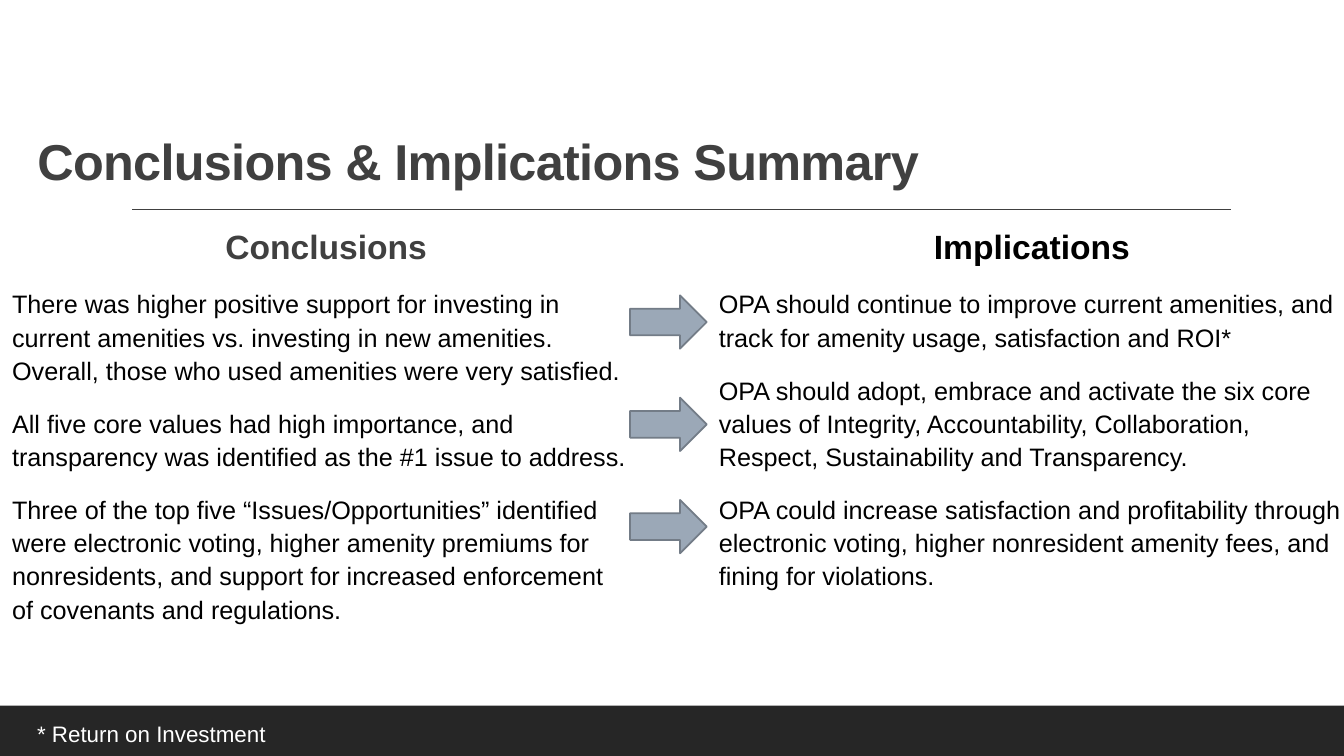
from dataclasses import dataclass

from lxml import etree
from pptx import Presentation
from pptx.dml.color import RGBColor
from pptx.enum.shapes import MSO_CONNECTOR, MSO_SHAPE
from pptx.enum.text import MSO_ANCHOR, MSO_AUTO_SIZE, PP_ALIGN
from pptx.oxml.ns import qn
from pptx.util import Inches, Pt

STRAIGHT = MSO_CONNECTOR.STRAIGHT
RECTANGLE, RIGHT_ARROW = MSO_SHAPE.RECTANGLE, MSO_SHAPE.RIGHT_ARROW
TOP, BOTTOM = MSO_ANCHOR.TOP, MSO_ANCHOR.BOTTOM
NO_FIT, GROW = MSO_AUTO_SIZE.NONE, MSO_AUTO_SIZE.SHAPE_TO_FIT_TEXT
LEFT, CENTER = PP_ALIGN.LEFT, PP_ALIGN.CENTER


@dataclass(frozen=True)
class Theme:
    """Colours, font and type sizes of the deck."""
    font: str = "Arial"
    gray: RGBColor = RGBColor(0x40, 0x40, 0x40)
    black: RGBColor = RGBColor(0, 0, 0)
    white: RGBColor = RGBColor(255, 255, 255)
    band: RGBColor = RGBColor(0x26, 0x26, 0x26)
    arrow: RGBColor = RGBColor(0x9B, 0xA8, 0xB7)
    arrow_edge: RGBColor = RGBColor(0x73, 0x7C, 0x87)
    title_size: int = 36
    heading_size: int = 24
    body_size: int = 18
    note_size: int = 16


THEME = Theme()

CONCLUSIONS = [
    "There was higher positive support for investing in current amenities vs. investing in "
    "new amenities. Overall, those who used amenities were very satisfied.",
    "All five core values had high importance, and transparency was identified as the "
    "#1 issue to address.",
    "Three of the top five “Issues/Opportunities” identified were electronic voting, higher "
    "amenity premiums for nonresidents, and support for increased enforcement of covenants "
    "and regulations.",
]
IMPLICATIONS = [
    "OPA should continue to improve current amenities, and track for amenity usage, "
    "satisfaction and ROI*",
    "OPA should adopt, embrace and activate the six core values of Integrity, "
    "Accountability, Collaboration, Respect, Sustainability and Transparency.",
    "OPA could increase satisfaction and profitability through electronic voting, higher "
    "nonresident amenity fees, and fining for violations.",
]


def place(shape, box):
    """Move a shape to a box of left, top, width and height in inches."""
    shape.left, shape.top, shape.width, shape.height = map(Inches, box)


def add_span(para, text, size, color, bold=False):
    """Append one formatted run to a paragraph."""
    span = para.add_run()
    span.text = text
    span.font.name = THEME.font
    span.font.size = Pt(size)
    span.font.bold = bold
    span.font.color.rgb = color
    return span


def add_solid(page, kind, box, fill):
    """Add a flat preset shape without an outline."""
    shape = page.shapes.add_shape(kind, *map(Inches, box))
    shape.shadow.inherit = False
    shape.fill.solid()
    shape.fill.fore_color.rgb = fill
    shape.line.fill.background()
    return shape


def fill_title(holder, box, text):
    """Place the title above the rule."""
    place(holder, box)
    frame = holder.text_frame
    frame.word_wrap = True
    frame.auto_size = NO_FIT
    frame.vertical_anchor = BOTTOM
    para = frame.paragraphs[0]
    para.alignment = LEFT
    para.line_spacing = 0.9
    span = add_span(para, text, THEME.title_size, THEME.gray, True)
    span.font._element.set("spc", "-50")


def fill_column(holder, box, heading, heading_color, points, heading_indent=0):
    """Fill a body placeholder with a centred heading and its points."""
    place(holder, box)
    frame = holder.text_frame
    frame.word_wrap = True
    frame.auto_size = NO_FIT
    frame.vertical_anchor = TOP
    frame.margin_left = frame.margin_right = 0
    for index, text in enumerate([heading, *points]):
        is_heading = index == 0
        para = frame.add_paragraph() if index else frame.paragraphs[0]
        props = para._p.get_or_add_pPr()
        props.set("marL", str(Inches(heading_indent if is_heading else 0)))
        props.set("indent", "0")
        etree.SubElement(props, qn("a:buNone"))
        para.alignment = CENTER if is_heading else LEFT
        para.line_spacing = 1.1
        para.space_before = Pt(0 if is_heading else 12)
        para.space_after = Pt(2)
        size = THEME.heading_size if is_heading else THEME.body_size
        color = heading_color if is_heading else THEME.black
        add_span(para, text, size, color, is_heading)


def add_rule(page, box):
    """Draw the thin line along the top of its box."""
    left, top, width, _ = box
    rule = page.shapes.add_connector(
        STRAIGHT, Inches(left), Inches(top), Inches(left + width), Inches(top))
    rule.line.color.rgb = THEME.gray
    rule.line.width = Pt(1)
    etree.SubElement(rule._element.spPr, qn("a:effectLst"))


def add_arrows(page, box, count):
    """Spread arrows evenly down a box."""
    left, top, width, height = box
    arrow_height = 0.53
    pitch = (height - arrow_height) / (count - 1)
    for row in range(count):
        arrow = add_solid(page, RIGHT_ARROW, (left, top + row * pitch, width, arrow_height),
                          THEME.arrow)
        arrow.line.color.rgb = THEME.arrow_edge
        arrow.line.width = Pt(1.25)


def add_footer(page, box, text):
    """Draw the dark band with its footnote."""
    left, top, _, _ = box
    add_solid(page, RECTANGLE, box, THEME.band)
    note = page.shapes.add_textbox(
        Inches(left + 0.27), Inches(top + 0.1), Inches(2.5), Inches(0.37))
    note.text_frame.word_wrap = False
    note.text_frame.auto_size = GROW
    add_span(note.text_frame.paragraphs[0], text, THEME.note_size, THEME.white)


def build_summary(deck):
    """Build the slide that pairs conclusions with implications."""
    page = deck.slides.add_slide(deck.slide_layouts[3])
    title, conclusions, implications = page.placeholders
    fill_title(title, (0.27, 0.36, 11, 1.59), "Conclusions & Implications Summary")
    fill_column(conclusions, (0.12, 2.15, 6.13, 4.95), "Conclusions", THEME.gray,
                CONCLUSIONS, heading_indent=0.1)
    fill_column(implications, (7.13, 2.15, 6.21, 5.19), "Implications", THEME.black,
                IMPLICATIONS)
    add_rule(page, (1.31, 2.08, 10.9, 0))
    add_arrows(page, (6.25, 2.93, 0.76, 2.56), len(CONCLUSIONS))
    add_footer(page, (0, 7, 13.33, 0.5), "* Return on Investment")


def main():
    """Create and save the deck."""
    deck = Presentation()
    deck.slide_width, deck.slide_height = Inches(13.33), Inches(7.5)
    build_summary(deck)
    deck.save("out.pptx")


if __name__ == "__main__":
    main()
